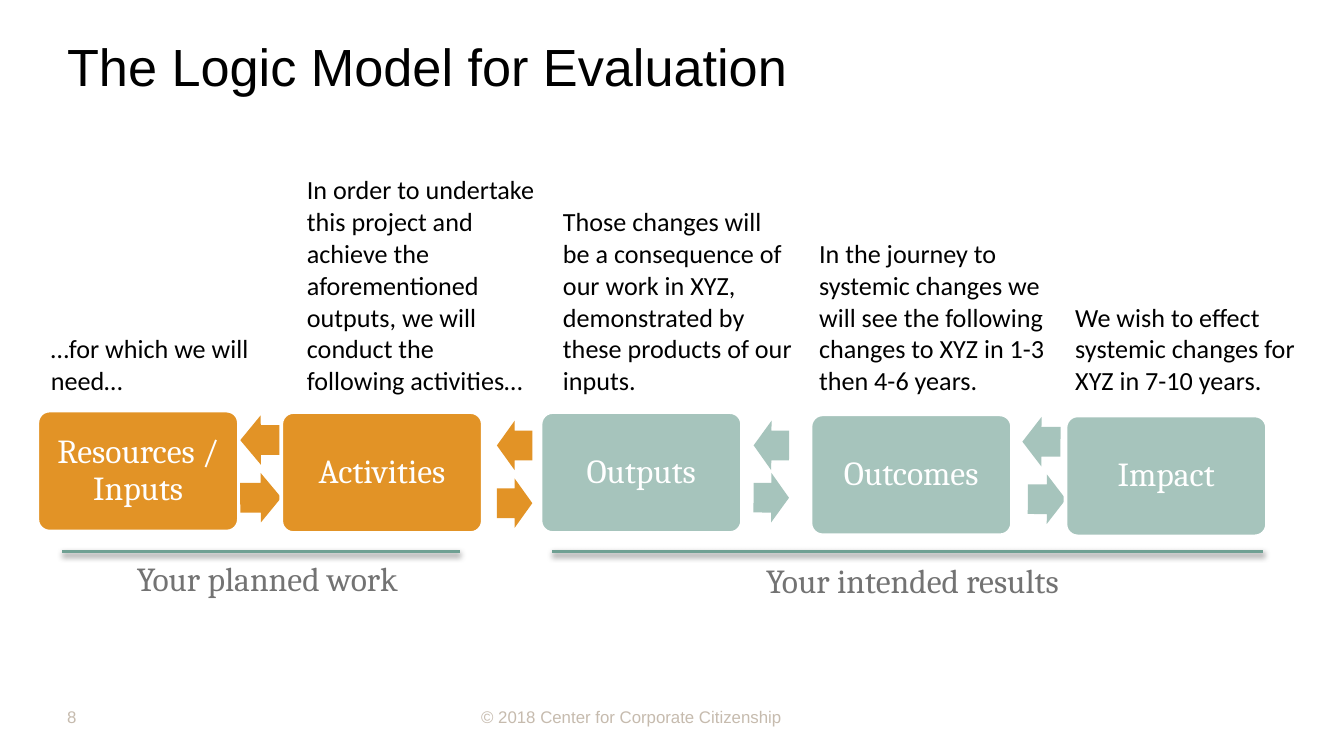
from lxml.etree import SubElement
from pptx import Presentation
from pptx.dml.color import RGBColor
from pptx.enum.shapes import MSO_CONNECTOR as Connector, MSO_SHAPE as Shape
from pptx.enum.text import MSO_ANCHOR as Anchor, MSO_AUTO_SIZE as AutoSize, PP_ALIGN as Align
from pptx.oxml.ns import qn
from pptx.util import Pt

BLACK, WHITE, GREY, TAUPE = "000000", "FFFFFF", "737373", "C6BBAE"
ORANGE, SAGE, GREEN = "E29326", "A6C4BC", "70A093"


def colour(value):
    return RGBColor.from_string(value)


def points(*lengths):
    return [Pt(length) for length in lengths]


def write(frame, text, font="Cambria", size=18, color=WHITE, align=Align.LEFT,
          anchor=Anchor.MIDDLE, spacing=None, inset=(0, 0), wrap=True):
    frame.word_wrap = wrap
    frame.vertical_anchor = anchor
    frame.margin_left = frame.margin_right = Pt(inset[0])
    frame.margin_top = frame.margin_bottom = Pt(inset[1])
    para = frame.paragraphs[0]
    para.alignment = align
    if spacing:
        para.line_spacing = spacing
    span = para.add_run()
    span.text = text
    span.font.name, span.font.size = font, Pt(size)
    span.font.color.rgb = colour(color)


class LogicModel:
    box_size = (108, 64.8)
    arrow_height = 26.5
    line_width = 2

    def __init__(self, page):
        self.page = page

    def text(self, content, left, top, width, height, **style):
        box = self.page.shapes.add_textbox(*points(left, top, width, height))
        write(box.text_frame, content, **style)
        return box

    def label(self, content, left, top, width):
        box = self.text(content, left, top, width, 29, color=GREY,
                        anchor=Anchor.TOP, inset=(7.2, 3.6), wrap=False)
        box.text_frame.auto_size = AutoSize.SHAPE_TO_FIT_TEXT

    def shape(self, kind, fill, left, top, width, height):
        shape = self.page.shapes.add_shape(kind, *points(left, top, width, height))
        shape.shadow.inherit = False
        shape.fill.solid()
        shape.fill.fore_color.rgb = colour(fill)
        shape.line.fill.background()
        return shape

    def stage(self, name, fill, left, top):
        box = self.shape(Shape.ROUNDED_RECTANGLE, fill, left, top, *self.box_size)
        box.adjustments[0] = 0.1
        box.line.color.rgb = colour(WHITE)
        box.line.width = Pt(self.line_width)
        write(box.text_frame, name, align=Align.CENTER, spacing=0.9, inset=(7.6, 7.6))

    def arrow(self, fill, left, top, width, rotation):
        arrow = self.shape(Shape.RIGHT_ARROW, fill, left, top, width, self.arrow_height)
        arrow.adjustments[0], arrow.adjustments[1] = 0.6, 0.5
        arrow.rotation = rotation

    def rule(self, start, end, top):
        line = self.page.shapes.add_connector(Connector.STRAIGHT, *points(start, top, end, top))
        line.line.color.rgb = colour(GREEN)
        line.line.width = Pt(self.line_width)
        effects = SubElement(line._element.spPr, qn("a:effectLst"))
        shadow = SubElement(effects, qn("a:outerShdw"), blurRad=str(Pt(3.1)),
                            dist=str(Pt(1.6)), dir="5400000", rotWithShape="0")
        black = SubElement(shadow, qn("a:srgbClr"), val=BLACK)
        SubElement(black, qn("a:alpha"), val="38000")

    def clear_cell(self, cell):
        properties = cell._tc.get_or_add_tcPr()
        for side in ("a:lnL", "a:lnR", "a:lnT", "a:lnB"):
            border = SubElement(properties, qn(side), w="0")
            SubElement(border, qn("a:noFill"))
        cell.fill.background()

    def table(self, texts, left, top, width, heights):
        frame = self.page.shapes.add_table(
            len(heights), len(texts), *points(left, top, width, sum(heights)))
        table = frame.table
        table.first_row = table.horz_banding = False
        for row, height in zip(table.rows, heights):
            row.height = Pt(height)
        for column in table.columns:
            column.width = Pt(width / len(texts))
        for cell in table.iter_cells():
            self.clear_cell(cell)
        for index, content in enumerate(texts):
            cell = table.cell(len(heights) - 1, index)
            write(cell.text_frame, content, font="Calibri", size=14, color=BLACK)
            cell.vertical_anchor = Anchor.BOTTOM
            cell.margin_left = cell.margin_right = Pt(7.2)
            cell.margin_top = cell.margin_bottom = Pt(3)


def main():
    deck = Presentation()
    deck.slide_width, deck.slide_height = points(720, 405)
    model = LogicModel(deck.slides.add_slide(deck.slide_layouts[6]))

    # Explanations above the stages
    model.table([
        "…for which we will need…",
        "In order to undertake this project and achieve the aforementioned outputs, "
        "we will conduct the following activities…",
        "Those changes will be a consequence of our work in XYZ, "
        "demonstrated by these products of our inputs.",
        "In the journey to systemic changes we will see the following changes "
        "to XYZ in 1-3 then 4-6 years.",
        "We wish to effect systemic changes for XYZ in 7-10 years.",
    ], 20, 41.8, 686, (37.4, 136.8))

    # Title and footer
    model.text("The Logic Model for Evaluation", 36, 5.8, 684, 58.3,
               font="Arial", size=28, color=BLACK)
    footer = {"font": "Arial", "size": 9, "color": TAUPE}
    model.text("© 2018 Center for Corporate Citizenship", 257.8, 373, 164, 21.6, **footer)
    model.text("8", 36, 373, 168, 21.6, **footer)

    # Stages, each followed by its arrows: backward above, forward below
    for name, fill, left, top, arrows in [
        ("Resources /Inputs", ORANGE, 20, 220, (22, (128.7, 222.5), (128.7, 253.4), -0.3)),
        ("Activities", ORANGE, 150.7, 220.8, (19, (266.2, 225.4), (266.2, 256.3), 0)),
        ("Outputs", SAGE, 289.6, 220.8, (19, (403.7, 225.4), (403.7, 253.4), 0.4)),
        ("Outcomes", SAGE, 434.2, 222, (20.4, (547.7, 223.4), (550.6, 254.2), 0.2)),
        ("Impact", SAGE, 570.8, 222.6, None),
    ]:
        model.stage(name, fill, left, top)
        if arrows:
            width, back, forward, tilt = arrows
            model.arrow(fill, *back, width, 180 + tilt)
            model.arrow(fill, *forward, width, tilt)

    # Spans below the stages
    model.label("Your planned work", 66.2, 295.2, 162)
    model.rule(33.4, 246.5, 295.5)
    model.label("Your intended results", 403.4, 296.6, 180.7)
    model.rule(295.8, 676.8, 295.5)

    deck.save("out.pptx")


if __name__ == "__main__":
    main()
